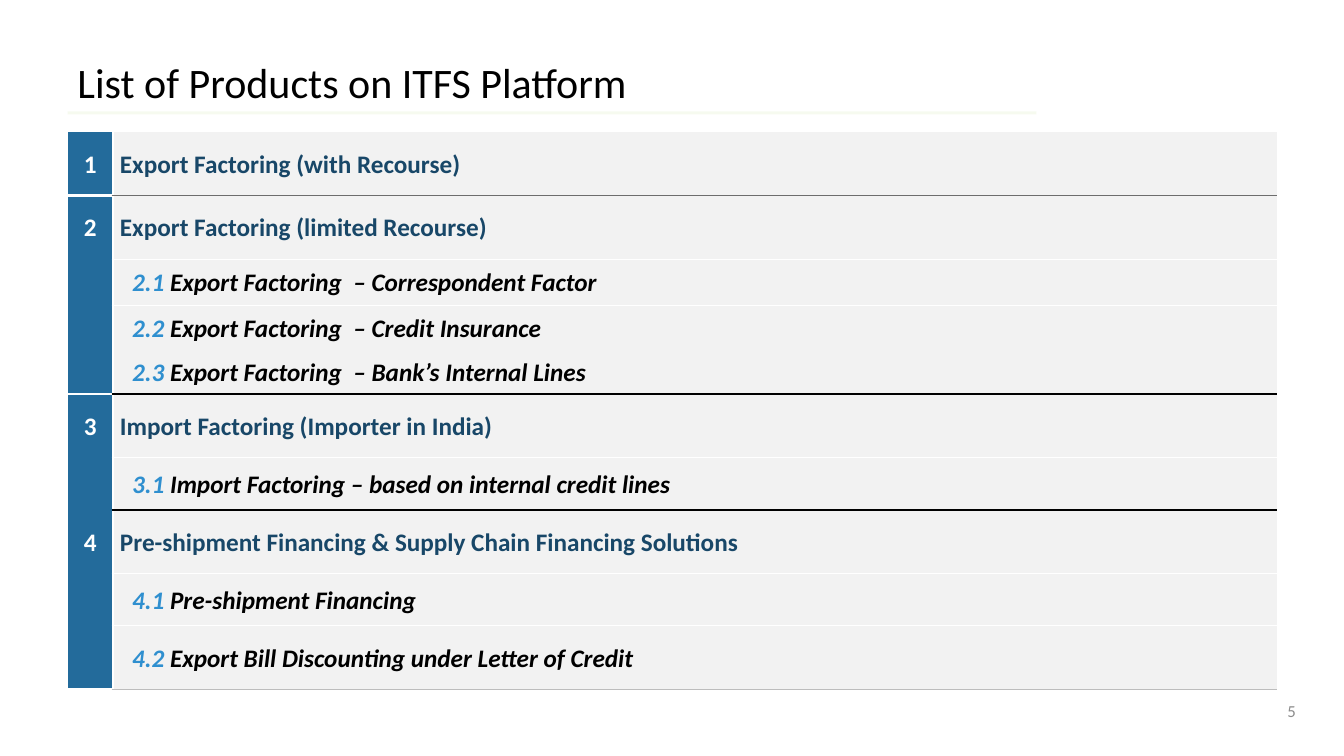
from lxml.etree import SubElement
from pptx import Presentation
from pptx.dml.color import RGBColor
from pptx.enum.shapes import MSO_CONNECTOR
from pptx.enum.text import MSO_ANCHOR, PP_ALIGN
from pptx.oxml.ns import qn
from pptx.util import Inches, Pt

BLUE, NAVY, SKY, GREY = "236B9B", "184768", "2F8FCF", "F2F2F2"
BLACK, WHITE = "000000", "FFFFFF"
THICK, THIN, RULE = (WHITE, 2.25), (WHITE, 0.75), (BLACK, 1)
COLUMN_WIDTHS = [0.45, 10.8, 0.75]
PRODUCTS = [
    ("1", "Export Factoring (with Recourse)", 0.63, THICK, ("6D6D6D", 1)),
    ("2", "Export Factoring (limited Recourse)", 0.63, None, THIN),
    ("2.1", "Export Factoring  – Correspondent Factor", 0.46, None, THIN),
    ("2.2", "Export Factoring  – Credit Insurance", 0.44, None, None),
    ("2.3", "Export Factoring  – Bank’s Internal Lines", 0.44, THICK, RULE),
    ("3", "Import Factoring (Importer in India)", 0.63, None, THIN),
    ("3.1", "Import Factoring – based on internal credit lines", 0.52, None, RULE),
    ("4", "Pre-shipment Financing & Supply Chain Financing Solutions", 0.63, None, THIN),
    ("4.1", "Pre-shipment Financing", 0.52, None, THIN),
    ("4.2", "Export Bill Discounting under Letter of Credit", 0.63, THICK, ("BDBDBD", 1)),
]


def rgb(color):
    """Turn a hex string into a colour."""
    return RGBColor.from_string(color)


def apply(target, formats):
    """Set every attribute named in a dict of format values."""
    for name, value in formats.items():
        setattr(target, name, value)


def add_run(paragraph, text, color, size=18, **formats):
    """Append a run of Calibri text."""
    run = paragraph.add_run()
    run.text = text
    apply(run.font, {"name": "Calibri", "size": Pt(size), **formats})
    run.font.color.rgb = rgb(color)


def add_label(slide, box, text, color, size, anchor, spacing=1.0):
    """Place one line of text in a box."""
    frame = slide.shapes.add_textbox(*map(Inches, box)).text_frame
    apply(frame, {"word_wrap": True, "vertical_anchor": anchor})
    frame.paragraphs[0].line_spacing = spacing
    add_run(frame.paragraphs[0], text, color, size)


def add_title(slide, box):
    """Place the title and the faint rule below it."""
    left, top, width, height = box
    add_label(slide, box, "List of Products on ITFS Platform", BLACK, 30, MSO_ANCHOR.BOTTOM, 0.9)
    bottom = Inches(top + height)
    rule = slide.shapes.add_connector(
        MSO_CONNECTOR.STRAIGHT, Inches(left), bottom, Inches(left + 9.61), bottom)
    rule.line.color.rgb = rgb("97C93C")
    rule.line.width = Pt(2.25)
    properties = rule._element.spPr
    for color in properties.iter(qn("a:srgbClr")):
        SubElement(color, qn("a:alpha"), val="8000")
    SubElement(properties, qn("a:effectLst"))


def set_borders(cell, **borders):
    """Draw the given cell edges and clear the others."""
    properties = cell._tc.get_or_add_tcPr()
    for side in "LRTB":
        border = borders.get(side)
        edge = SubElement(properties, qn(f"a:ln{side}"))
        if border:
            color, width = border
            edge.set("w", str(Pt(width)))
            SubElement(SubElement(edge, qn("a:solidFill")), qn("a:srgbClr"), val=color)
        else:
            SubElement(edge, qn("a:noFill"))


def fill_product(paragraph, number, name):
    """Write a main product, or a numbered variant set in italics."""
    variant = "." in number
    properties = paragraph._p.get_or_add_pPr()
    properties.set("marL", str(Inches(0.5 if variant else 0.38)))
    properties.set("indent", str(Inches(-0.38)))
    if variant:
        add_run(paragraph, f"{number} ", SKY, bold=True, italic=True)
    add_run(paragraph, name, BLACK if variant else NAVY, bold=True, italic=variant)


def add_products(slide, box):
    """Place the table of products."""
    table = slide.shapes.add_table(
        len(PRODUCTS), len(COLUMN_WIDTHS), *map(Inches, box)).table
    apply(table, {"first_row": False, "horz_banding": False})
    for column, width in zip(table.columns, COLUMN_WIDTHS):
        column.width = Inches(width)
    number_top = name_top = None
    for row, (number, name, height, number_bottom, name_bottom) in zip(table.rows, PRODUCTS):
        row.height = Inches(height)
        number_cell, name_cell, end_cell = row.cells
        set_borders(number_cell, R=THICK, T=number_top, B=number_bottom)
        set_borders(name_cell, L=THICK, T=name_top, B=name_bottom)
        set_borders(end_cell, T=name_top, B=name_bottom)
        number_top, name_top = number_bottom, name_bottom
        for cell, color in zip(row.cells, (BLUE, GREY, GREY)):
            cell.fill.solid()
            cell.fill.fore_color.rgb = rgb(color)
            apply(cell, {"vertical_anchor": MSO_ANCHOR.MIDDLE,
                         "margin_left": Inches(0.07), "margin_right": Inches(0.07),
                         "margin_top": 0, "margin_bottom": 0})
            cell.text_frame.paragraphs[0].line_spacing = 1.07
        if "." not in number:
            heading = number_cell.text_frame.paragraphs[0]
            heading.alignment = PP_ALIGN.CENTER
            add_run(heading, number, WHITE, bold=True)
        fill_product(name_cell.text_frame.paragraphs[0], number, name)


def main():
    """Build the slide and save it."""
    deck = Presentation()
    apply(deck, {"slide_width": Inches(13.33), "slide_height": Inches(7.5)})
    slide = deck.slides.add_slide(deck.slide_layouts[6])
    add_title(slide, (0.67, 0.4, 12, 0.72))
    add_products(slide, (0.67, 1.31, 12, 5.55))
    add_label(slide, (12.67, 6.85, 0.65, 0.4), "5", "8C8C8C", 12, MSO_ANCHOR.MIDDLE)
    deck.save("out.pptx")


if __name__ == "__main__":
    main()
